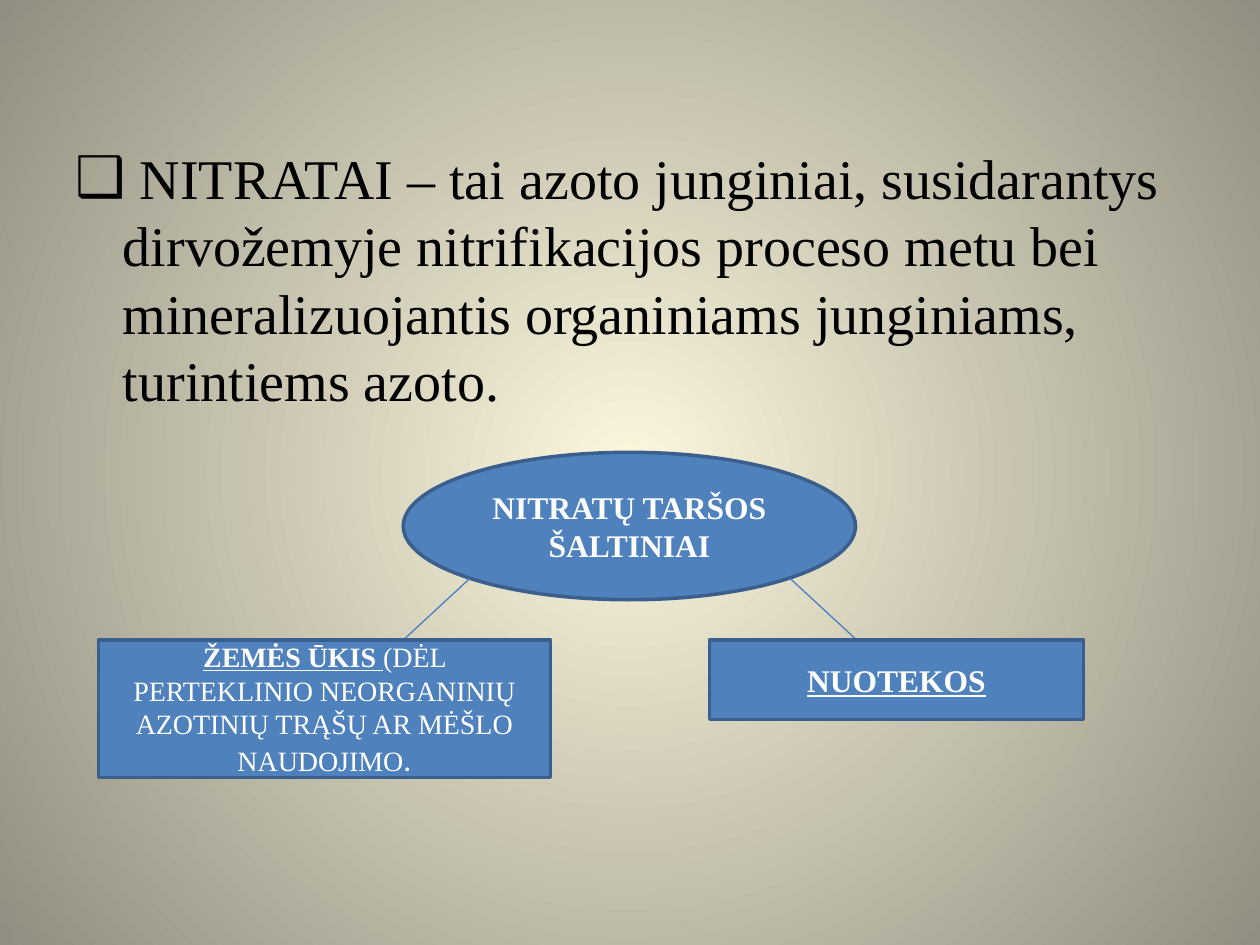
"""Build a slide that defines nitrates and shows the sources of their pollution."""
from dataclasses import dataclass

from lxml import etree
from pptx import Presentation
from pptx.dml.color import RGBColor
from pptx.enum.shapes import MSO_CONNECTOR, MSO_SHAPE
from pptx.enum.text import MSO_ANCHOR, PP_ALIGN
from pptx.oxml.ns import qn
from pptx.util import Inches, Pt

OVAL, RECT = MSO_SHAPE.OVAL, MSO_SHAPE.RECTANGLE
STRAIGHT = MSO_CONNECTOR.STRAIGHT
MIDDLE, CENTER = MSO_ANCHOR.MIDDLE, PP_ALIGN.CENTER


@dataclass(frozen=True)
class Theme:
    font: str = "Times New Roman"
    stop_font: str = "Calibri"
    glow: str = "FCF7DD"
    edge: str = "918E81"
    ink: str = "000000"
    light: str = "FFFFFF"
    fill: str = "4F81BD"
    outline: str = "3A5F8C"
    link: str = "4B7EBC"
    body: int = 32
    label: int = 18
    detail: int = 16


def add_run(p, text, *, size, color, font, bold=False, underline=False):
    r = p.add_run()
    r.text = text
    r.font.name, r.font.size = font, Pt(size)
    r.font.bold, r.font.underline = bold, underline
    r.font.color.rgb = RGBColor.from_string(color)


class SlideBuilder:
    def __init__(self, s, theme):
        self.s, self.theme = s, theme

    def background(self):
        fill = self.s.background.fill
        fill.gradient()
        for stop, color in zip(fill.gradient_stops, (self.theme.glow, self.theme.edge)):
            stop.color.rgb = RGBColor.from_string(color)
        grad = self.s.element.find(".//" + qn("a:gradFill"))
        lin = grad.find(qn("a:lin"))
        path = etree.Element(qn("a:path"), {"path": "circle"})
        etree.SubElement(path, qn("a:fillToRect"), dict.fromkeys("ltrb", "50000"))
        grad.replace(lin, path)

    def body(self, text, left, top, width, height, bullet):
        title, sp = self.s.shapes.title, self.s.placeholders[1]
        title.element.getparent().remove(title.element)
        sp.left, sp.top = Inches(left), Inches(top)
        sp.width, sp.height = Inches(width), Inches(height)
        p = sp.text_frame.paragraphs[0]
        add_run(p, text, size=self.theme.body, color=self.theme.ink, font=self.theme.font)
        p_pr = p._p.get_or_add_pPr()
        etree.SubElement(p_pr, qn("a:buChar"), {"char": bullet})

    def box(self, kind, left, top, width, height, runs):
        sp = self.s.shapes.add_shape(
            kind, Inches(left), Inches(top), Inches(width), Inches(height))
        sp.shadow.inherit = False
        sp.fill.solid()
        sp.fill.fore_color.rgb = RGBColor.from_string(self.theme.fill)
        sp.line.color.rgb = RGBColor.from_string(self.theme.outline)
        sp.line.width = Pt(2)
        tf = sp.text_frame
        tf.word_wrap, tf.vertical_anchor = True, MIDDLE
        p = tf.paragraphs[0]
        p.alignment = CENTER
        base = {"size": self.theme.label, "color": self.theme.light, "font": self.theme.font}
        for text, style in runs:
            add_run(p, text, **{**base, **style})

    def link(self, x1, y1, x2, y2):
        line = self.s.shapes.add_connector(
            STRAIGHT, Inches(x1), Inches(y1), Inches(x2), Inches(y2))
        line.line.color.rgb = RGBColor.from_string(self.theme.link)
        line.line.width = Pt(0.75)
        etree.SubElement(line.element.spPr, qn("a:effectLst"))


def main():
    prs = Presentation()
    prs.slide_width, prs.slide_height = Inches(10), Inches(7.5)
    theme = Theme()
    slide = SlideBuilder(prs.slides.add_slide(prs.slide_layouts[1]), theme)
    center, row = 5, 5.08
    heading = {"bold": True, "underline": True}

    slide.background()
    slide.body(
        " NITRATAI – tai azoto junginiai, susidarantys dirvožemyje nitrifikacijos "
        "proceso metu bei mineralizuojantis organiniams junginiams, turintiems azoto.",
        0.5, 1.09, 9, 5.61, "❑")
    slide.box(OVAL, 3.2, 3.59, 3.59, 1.17, [("NITRATŲ TARŠOS ŠALTINIAI", {"bold": True})])
    for side in (-1, 1):
        slide.link(center + side * 1.27, 4.59, center + side * 1.8, row)
    slide.box(RECT, 0.78, row, 3.59, 1.09, [
        ("ŽEMĖS ŪKIS ", {"size": theme.detail, **heading}),
        ("(DĖL PERTEKLINIO NEORGANINIŲ AZOTINIŲ TRĄŠŲ AR MĖŠLO NAUDOJIMO",
         {"size": theme.detail}),
        (".", {"font": theme.stop_font}),
    ])
    slide.box(RECT, 5.63, row, 2.97, 0.63, [("NUOTEKOS", heading)])
    prs.save("out.pptx")


if __name__ == "__main__":
    main()
